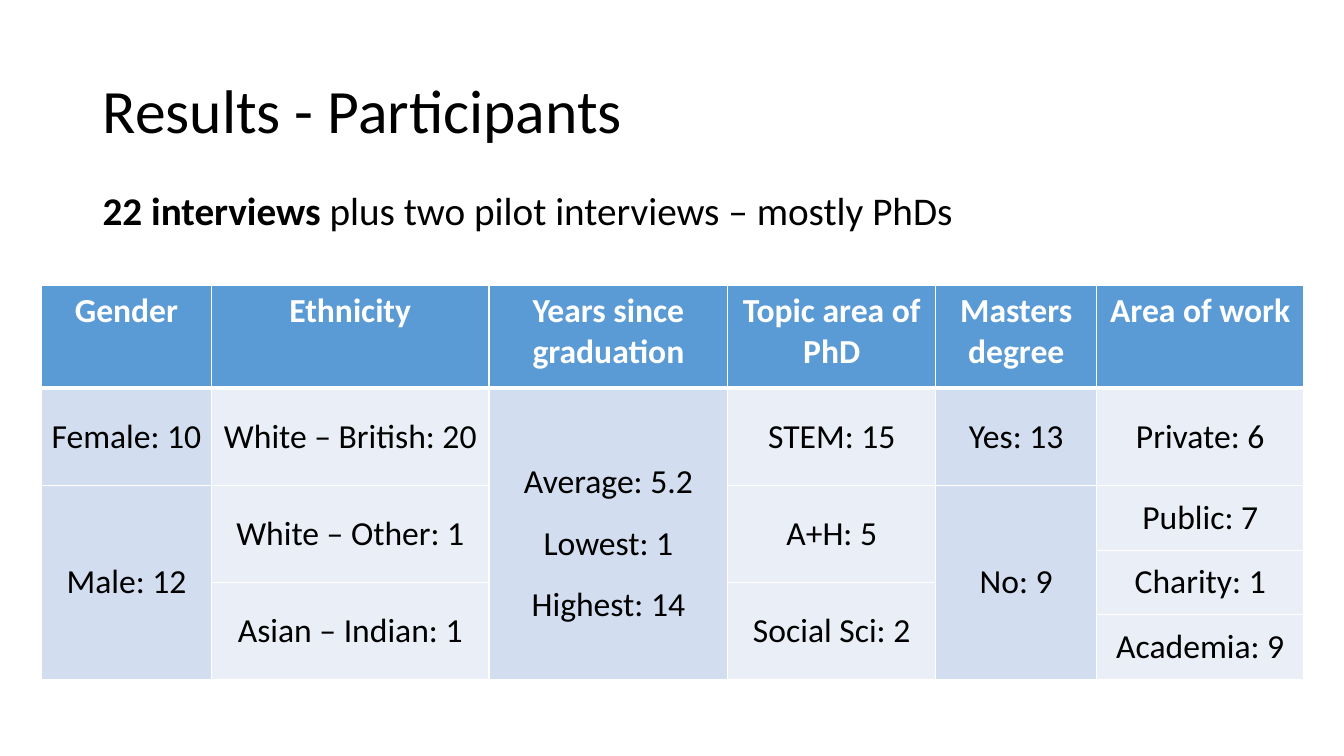
from lxml.etree import SubElement
from pptx import Presentation
from pptx.dml.color import RGBColor
from pptx.enum.text import MSO_ANCHOR as Anchor, PP_ALIGN as Align
from pptx.oxml.ns import qn
from pptx.util import Inches, Pt

BLACK = RGBColor(0x00, 0x00, 0x00)
WHITE = RGBColor(0xFF, 0xFF, 0xFF)
HEADER_BLUE = RGBColor(0x5B, 0x9B, 0xD5)
MID_BLUE = RGBColor(0xD2, 0xDE, 0xEF)
PALE_BLUE = RGBColor(0xEA, 0xEF, 0xF7)
FONT = "Calibri"

TITLE = [("Results - Participants", False)]
SUMMARY = [("22 interviews ", True), ("plus two pilot interviews – mostly PhDs", False)]
ROW_HEIGHTS = [1.02, 0.97, 0.64, 0.32, 0.32, 0.64]

# Each column: heading, width, fill, then (rows spanned, lines) from top to bottom
COLUMNS = [
    ("Gender", 1.69, MID_BLUE, [(1, ["Female: 10"]), (4, ["Male: 12"])]),
    ("Ethnicity", 2.75, PALE_BLUE,
     [(1, ["White – British: 20"]), (2, ["White – Other: 1"]), (2, ["Asian – Indian: 1"])]),
    ("Years since graduation", 2.37, MID_BLUE,
     [(5, ["Average: 5.2", "Lowest: 1", "Highest: 14"])]),
    ("Topic area of PhD", 2.06, PALE_BLUE,
     [(1, ["STEM: 15"]), (2, ["A+H: 5"]), (2, ["Social Sci: 2"])]),
    ("Masters degree", 1.6, MID_BLUE, [(1, ["Yes: 13"]), (4, ["No: 9"])]),
    ("Area of work", 2.05, PALE_BLUE,
     [(1, ["Private: 6"]), (1, ["Public: 7"]), (2, ["Charity: 1"]), (1, ["Academia: 9"])]),
]


def add_span(para, text, size, color, bold):
    """Add one formatted run to a paragraph."""
    span = para.add_run()
    span.text = text
    span.font.name, span.font.size, span.font.bold = FONT, Pt(size), bold
    span.font.color.rgb = color


def add_text(page, area, spans, size, anchor, space_before):
    """Add a one-paragraph text box."""
    frame = page.shapes.add_textbox(*map(Inches, area)).text_frame
    frame.word_wrap, frame.vertical_anchor = True, anchor
    para = frame.paragraphs[0]
    para.line_spacing, para.space_before = 0.9, Pt(space_before)
    for text, bold in spans:
        add_span(para, text, size, BLACK, bold)


def style_cell(cell, fill, top, bottom):
    """Give a cell its fill and white borders."""
    properties = cell._tc.get_or_add_tcPr()
    for side, width in (("L", 1), ("R", 1), ("T", top), ("B", bottom)):
        line = SubElement(properties, qn(f"a:ln{side}"), w=str(Pt(width)))
        solid = SubElement(line, qn("a:solidFill"))
        SubElement(solid, qn("a:srgbClr"), val=str(WHITE))
    cell.fill.solid()
    cell.fill.fore_color.rgb = fill


def write_cell(cell, lines, color, bold, anchor):
    """Write centred lines into a cell."""
    cell.vertical_anchor = anchor
    for index, text in enumerate(lines):
        paragraphs = cell.text_frame
        para = paragraphs.add_paragraph() if index else paragraphs.paragraphs[0]
        para.alignment = Align.CENTER
        if len(lines) > 1:
            para.line_spacing = 1.5
        add_span(para, text, 24, color, bold)


def add_participants(page):
    """Add the participant table with its merged cells."""
    widths = [column[1] for column in COLUMNS]
    area = (0.41, 2.83, sum(widths), sum(ROW_HEIGHTS))
    table = page.shapes.add_table(
        len(ROW_HEIGHTS), len(COLUMNS), *map(Inches, area)).table
    for row, height in zip(table.rows, ROW_HEIGHTS):
        row.height = Inches(height)
    for position, (heading, width, fill, groups) in enumerate(COLUMNS):
        table.columns[position].width = Inches(width)
        for row in range(len(ROW_HEIGHTS)):
            style_cell(table.cell(row, position), fill if row else HEADER_BLUE,
                       3 if row == 1 else 1, 1 if row else 3)
        write_cell(table.cell(0, position), [heading], WHITE, True, Anchor.TOP)
        start = 1
        for rows, lines in groups:
            cell = table.cell(start, position)
            if rows > 1:
                cell.merge(table.cell(start + rows - 1, position))
            write_cell(cell, lines, BLACK, False, Anchor.MIDDLE)
            start += rows


def main():
    """Build the participants slide."""
    deck = Presentation()
    deck.slide_width, deck.slide_height = Inches(13.33), Inches(7.5)
    page = deck.slides.add_slide(deck.slide_layouts[6])
    add_text(page, (0.92, 0.4, 11.5, 1.45), TITLE, 44, Anchor.MIDDLE, 0)
    add_text(page, (0.92, 1.85, 11.5, 4.91), SUMMARY, 28, Anchor.TOP, 10)
    add_participants(page)
    deck.save("out.pptx")


if __name__ == "__main__":
    main()
